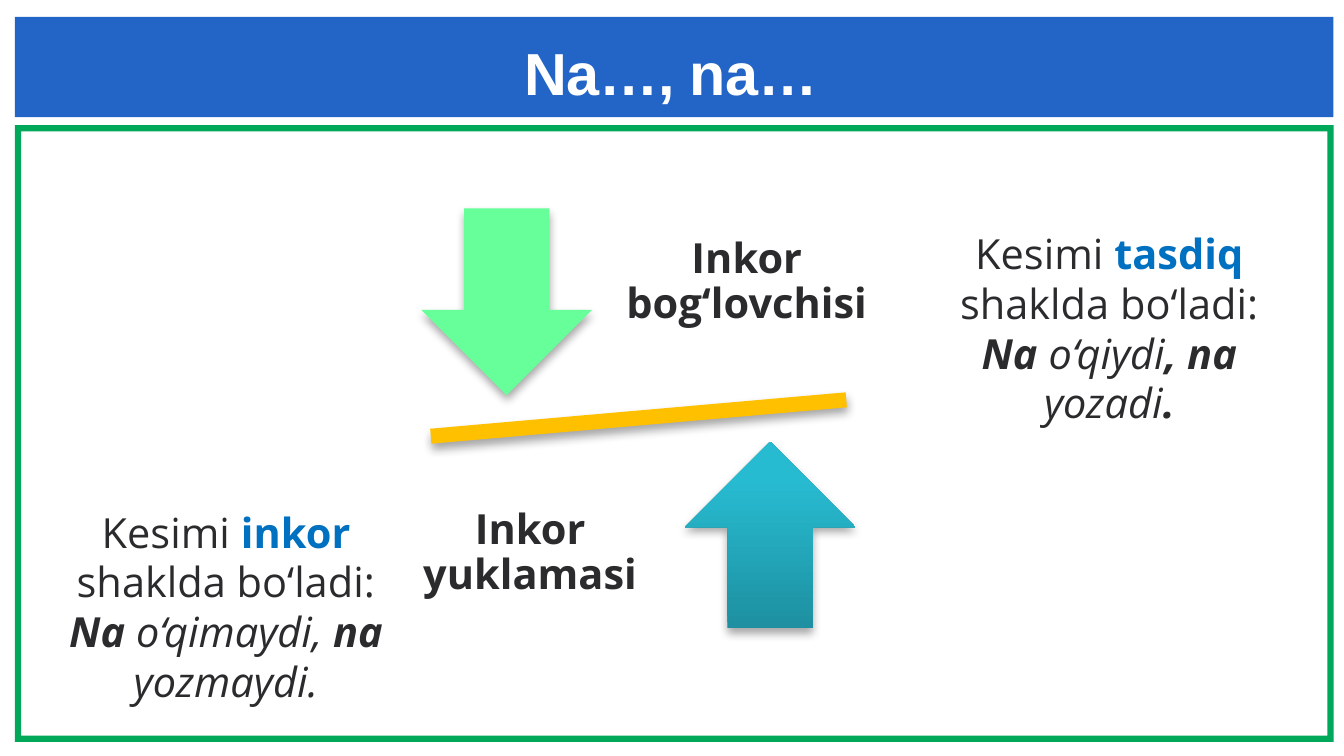
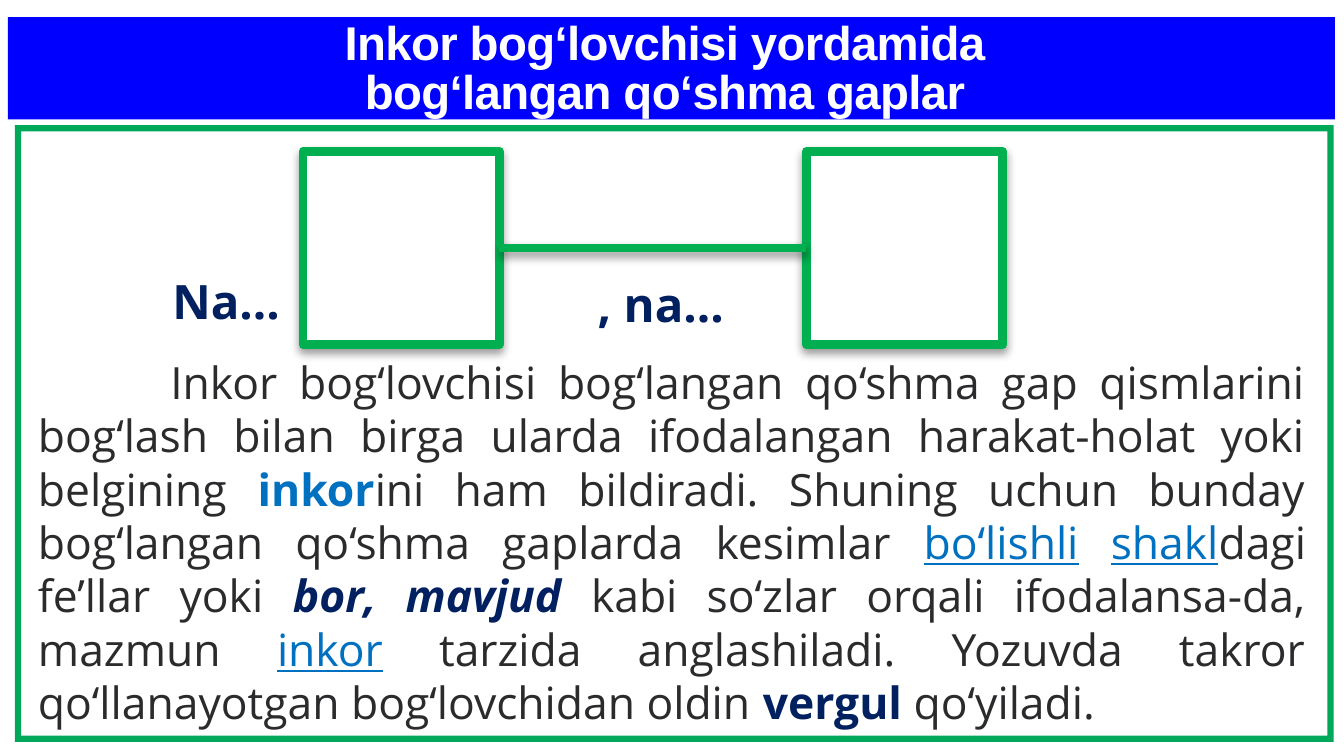
from lxml import etree
from pptx import Presentation, util as u
from pptx.dml.color import RGBColor
from pptx.enum import shapes, text
from pptx.oxml.ns import qn

SLIDE_WIDTH, SLIDE_HEIGHT = u.Cm(16), u.Cm(9)
CELL = u.Inches(0.1)

WHITE = RGBColor(0xFF, 0xFF, 0xFF)
INK = RGBColor(0x2B, 0x2B, 0x2D)
BLUE = RGBColor(0x23, 0x65, 0xC7)
PURE_BLUE = RGBColor(0x00, 0x00, 0xFF)
KEY_BLUE = RGBColor(0x00, 0x70, 0xC0)
NAVY = RGBColor(0x00, 0x20, 0x60)
FRAME_GREEN = RGBColor(0x00, 0xA8, 0x59)
GREEN = RGBColor(0x00, 0xB0, 0x50)
MINT = RGBColor(0x66, 0xFF, 0x99)
AMBER = RGBColor(0xFF, 0xC0, 0x00)
TEAL_DARK = RGBColor(0x1E, 0x90, 0xA1)
TEAL = RGBColor(0x27, 0xBB, 0xD1)

TITLE_FONT, BODY_FONT = "Arial", "Open Sans"
CENTER, JUSTIFY, LEFT = text.PP_ALIGN.CENTER, text.PP_ALIGN.JUSTIFY, text.PP_ALIGN.LEFT
TOP, MIDDLE = text.MSO_ANCHOR.TOP, text.MSO_ANCHOR.MIDDLE
SHAPE = shapes.MSO_SHAPE

# Each style: text colour and font attributes
STYLES = {
    "plain": (INK, {}),
    "bold": (INK, {"bold": True}),
    "italic": (INK, {"italic": True}),
    "strong": (INK, {"bold": True, "italic": True}),
    "key": (KEY_BLUE, {"bold": True}),
    "under": (KEY_BLUE, {"underline": True}),
    "navy": (NAVY, {"bold": True}),
    "term": (NAVY, {"bold": True, "italic": True}),
    "title": (WHITE, {"bold": True}),
}


def apply(target, values):
    for name, value in values.items():
        setattr(target, name, value)


def cells(*counts):
    return [round(count * CELL) for count in counts]


class Deck:
    def __init__(self):
        self.prs = Presentation()
        apply(self.prs, {"slide_width": SLIDE_WIDTH, "slide_height": SLIDE_HEIGHT})
        self.slide = None

    def new_slide(self, title_lines, band, fill, size, insets):
        """Start a slide with its frame and title band; insets are top and right."""
        self.slide = self.prs.slides.add_slide(self.prs.slide_layouts[6])
        frame = self.shape(SHAPE.FRAME, (0.7, 5.87, 61.8, 28.9), FRAME_GREEN)
        frame.adjustments[0] = 0.01
        header = self.shape(SHAPE.RECTANGLE, band, fill)
        frame_text = header.text_frame
        top, right = cells(*insets)
        apply(frame_text, {"margin_left": 0, "margin_right": right,
                           "margin_top": top, "margin_bottom": 0,
                           "vertical_anchor": MIDDLE, "word_wrap": True})
        paragraph = frame_text.paragraphs[0]
        apply(paragraph, {"alignment": CENTER, "line_spacing": 0.86})
        for number, line in enumerate(title_lines):
            if number:
                paragraph.add_line_break()
            run = self.run(paragraph, line, "title", size, TITLE_FONT)
            run.font._element.set("spc", "-20")

    def run(self, paragraph, words, style, size, font=BODY_FONT):
        run = paragraph.add_run()
        run.text = words
        colour, values = STYLES[style]
        apply(run.font, {"name": font, "size": u.Pt(size), **values})
        run.font.color.rgb = colour
        return run

    def shadow(self, item, opacity, distance):
        """Give the item a soft shadow straight below it."""
        properties = item._element.spPr
        effects = properties.find(qn("a:effectLst"))
        if effects is None:
            effects = etree.SubElement(properties, qn("a:effectLst"))
        outer = etree.SubElement(effects, qn("a:outerShdw"), blurRad=str(u.Pt(3.1)),
                                 dist=str(u.Pt(distance)), dir="5400000",
                                 rotWithShape="0")
        black = etree.SubElement(outer, qn("a:srgbClr"), val="000000")
        etree.SubElement(black, qn("a:alpha"), val=str(opacity * 1000))

    def shape(self, kind, box, fill):
        item = self.slide.shapes.add_shape(kind, *cells(*box))
        item.fill.solid()
        item.fill.fore_color.rgb = fill
        item.line.fill.background()
        item.shadow.inherit = False
        return item

    def sign(self, kind, box, fill):
        """Add a shape of the balance diagram."""
        item = self.shape(kind, box, fill)
        self.shadow(item, 35, 1.8)
        return item

    def outline(self, line):
        line.color.rgb = GREEN
        line.width = u.Pt(3)

    def clause(self, box):
        """Add a square that stands for one part of the sentence."""
        square = self.shape(SHAPE.RECTANGLE, box, WHITE)
        self.outline(square.line)
        self.shadow(square, 38, 1.6)
        return square

    def link(self, first, second):
        line = self.slide.shapes.add_connector(shapes.MSO_CONNECTOR.STRAIGHT, 0, 0, 0, 0)
        line.begin_connect(first, 3)
        line.end_connect(second, 1)
        self.outline(line.line)
        self.shadow(line, 38, 1.6)

    def text(self, box, paragraphs, size=14, align=CENTER, anchor=TOP,
             spacing=1.0, wrap=True, indent=0):
        """Add paragraphs, each a list of (words, style) pairs."""
        frame = self.slide.shapes.add_textbox(*cells(*box)).text_frame
        apply(frame, {"word_wrap": wrap, "vertical_anchor": anchor})
        for number, runs in enumerate(paragraphs):
            paragraph = frame.add_paragraph() if number else frame.paragraphs[0]
            apply(paragraph, {"alignment": align, "line_spacing": spacing})
            if indent:
                paragraph._p.get_or_add_pPr().set("indent", str(cells(indent)[0]))
            for words, style in runs:
                self.run(paragraph, words, style, size)


def balance_slide(deck):
    deck.new_slide(["Na…, na…"], (0.7, 0.8, 61.8, 4.7), BLUE, 20, (0.9, 0.3))
    beam = deck.sign(SHAPE.MATH_MINUS, (16.63, 18.1, 26.6, 3), AMBER)
    beam.rotation = -5
    deck.sign(SHAPE.DOWN_ARROW, (19.75, 9.77, 8, 8.75), MINT)
    rising = deck.sign(SHAPE.UP_ARROW, (32.1, 20.7, 8, 8.75), TEAL)
    rising.fill.gradient()
    rising.fill.gradient_angle = 90
    for stop, colour, position in zip(rising.fill.gradient_stops,
                                      (TEAL_DARK, TEAL), (0, 0.8)):
        stop.color.rgb = colour
        stop.position = position

    for box, label in (((28.25, 8.65, 13.5, 9.2), "Inkor bog‘lovchisi"),
                       ((18.6, 21.35, 12.5, 9.2), "Inkor yuklamasi")):
        deck.text(box, [[(label, "bold")]], anchor=MIDDLE, spacing=0.9)

    affirmative = [("Na ", "strong"), ("o‘qiydi", "italic"), (", na ", "strong"),
                   ("yozadi", "italic"), (".", "strong")]
    negative = [("Na ", "strong"), ("o‘qimaydi, ", "italic"), ("na ", "strong"),
                ("yozmaydi.", "italic")]
    for box, form, example in (((42.15, 10.2, 19.7, 10.4), "tasdiq ", affirmative),
                               ((1.95, 23.25, 17.3, 10.4), "inkor ", negative)):
        rule = [("Kesimi ", "plain"), (form, "key"), ("shaklda bo‘ladi:", "plain")]
        deck.text(box, [rule, example])


def compound_slide(deck):
    deck.new_slide(["Inkor bog‘lovchisi yordamida ", "bog‘langan qo‘shma gaplar "],
                   (0.37, 0.8, 62.2, 4.8), PURE_BLUE, 16, (0.2, 0))
    first, second = [deck.clause((col, 7.1, 9.2, 9.05)) for col in (14.2, 37.8)]
    deck.link(first, second)
    for box, particle in (((7.1, 12.25, 7.1, 3.7), "Na…"),
                          ((27.03, 12.4, 8.8, 3.7), ", na…")):
        deck.text(box, [[(particle, "navy")]], size=16, align=LEFT, wrap=False)
    explanation = [
        ("Inkor bog‘lovchisi bog‘langan qo‘shma gap qismlarini bog‘lash bilan birga "
         "ularda ifodalangan harakat-holat yoki belgining ", "plain"),
        ("inkor", "key"),
        ("ini ham bildiradi. Shuning uchun bunday bog‘langan qo‘shma gaplarda "
         "kesimlar ", "plain"),
        ("bo‘lishli", "under"), (" ", "plain"), ("shakl", "under"),
        ("dagi fe’llar yoki ", "plain"),
        ("bor, mavjud ", "term"),
        ("kabi so‘zlar orqali ifodalansa-da, mazmun ", "plain"),
        ("inkor", "under"),
        (" tarzida anglashiladi. Yozuvda takror qo‘llanayotgan bog‘lovchidan "
         "oldin ", "plain"),
        ("vergul ", "navy"),
        ("qo‘yiladi.", "plain"),
    ]
    deck.text((0.8, 16.15, 61.4, 18.7), [explanation], size=15, align=JUSTIFY, indent=6.2)


def main():
    deck = Deck()
    balance_slide(deck)
    compound_slide(deck)
    deck.prs.save("out.pptx")


if __name__ == "__main__":
    main()
